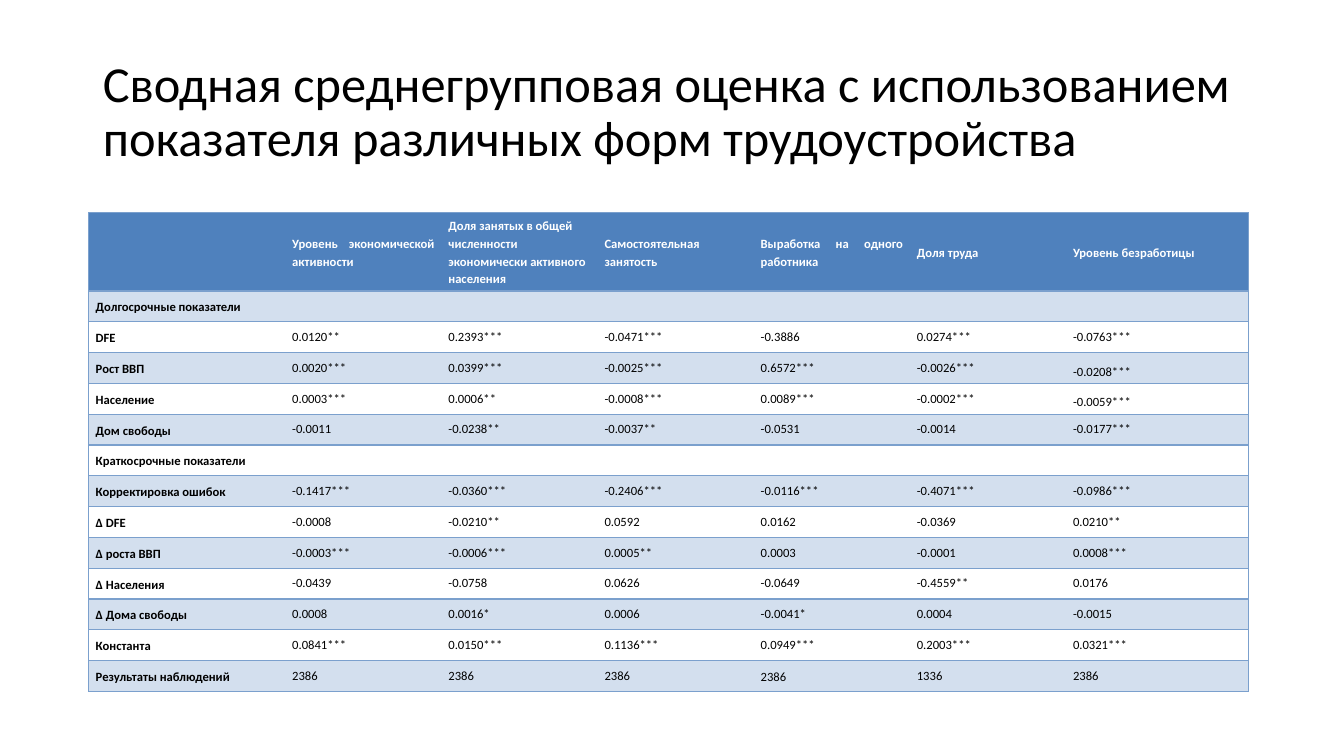
from dataclasses import dataclass

from lxml.etree import SubElement
from pptx import Presentation
from pptx.dml.color import RGBColor
from pptx.enum.text import MSO_ANCHOR, MSO_AUTO_SIZE, PP_ALIGN
from pptx.oxml.ns import qn
from pptx.util import Inches, Pt


@dataclass(frozen=True)
class Theme:
    """Colours, font and type sizes of the slide."""
    font: str = "Calibri"
    ink: str = "000000"
    light: str = "FFFFFF"
    head: str = "4F81BD"
    band: str = "D3DFEE"
    rule: str = "7BA0CD"
    title: int = 36
    body: int = 9


THEME = Theme()
WIDE, HIGH = Inches(13.33), Inches(7.5)
TITLE = "Сводная среднегрупповая оценка с использованием показателя различных форм трудоустройства"
HEADS = [
    "",
    "Уровень экономической активности",
    "Доля занятых в общей численности экономически активного населения",
    "Самостоятельная занятость",
    "Выработка на одного работника",
    "Доля труда",
    "Уровень безработицы",
]
BODY = [
    ["Долгосрочные показатели"] + [""] * 6,
    ["DFE", "0.0120**", "0.2393***", "-0.0471***", "-0.3886", "0.0274***", "-0.0763***"],
    ["Рост ВВП", "0.0020***", "0.0399***", "-0.0025***", "0.6572***", "-0.0026***", "-0.0208***"],
    ["Население", "0.0003***", "0.0006**", "-0.0008***", "0.0089***", "-0.0002***", "-0.0059***"],
    ["Дом свободы", "-0.0011", "-0.0238**", "-0.0037**", "-0.0531", "-0.0014", "-0.0177***"],
    ["Краткосрочные показатели"] + [""] * 6,
    ["Корректировка ошибок", "-0.1417***", "-0.0360***", "-0.2406***", "-0.0116***", "-0.4071***", "-0.0986***"],
    ["Δ DFE", "-0.0008", "-0.0210**", "0.0592", "0.0162", "-0.0369", "0.0210**"],
    ["Δ роста ВВП", "-0.0003***", "-0.0006***", "0.0005**", "0.0003", "-0.0001", "0.0008***"],
    ["Δ Населения", "-0.0439", "-0.0758", "0.0626", "-0.0649", "-0.4559**", "0.0176"],
    ["Δ Дома свободы", "0.0008", "0.0016*", "0.0006", "-0.0041*", "0.0004", "-0.0015"],
    ["Константа", "0.0841***", "0.0150***", "0.1136***", "0.0949***", "0.2003***", "0.0321***"],
    ["Результаты наблюдений", "2386", "2386", "2386", "2386", "1336", "2386"],
]
COLS = [1.95] + [1.55] * 5 + [1.81]
HEAD_PART = 0.16
LOW = {(3, 6), (4, 6)}
LOOSE = LOW | {(13, 4)}


def area(left, top, width, height):
    """Turn percentages of the slide into a box of lengths."""
    return (int(WIDE * left / 100), int(HIGH * top / 100),
            int(WIDE * width / 100), int(HIGH * height / 100))


def style(font, size, color, bold=False):
    """Format a font in the theme's typeface."""
    font.name, font.size, font.bold = THEME.font, Pt(size), bold
    font.color.rgb = RGBColor.from_string(color)


def add_title(slide, box):
    """Place and format the title in its box."""
    title = slide.shapes.title
    title.left, title.top, title.width, title.height = box
    frame = title.text_frame
    frame.text = TITLE
    frame.word_wrap = True
    frame.auto_size = MSO_AUTO_SIZE.NONE
    frame.vertical_anchor = MSO_ANCHOR.MIDDLE
    para = frame.paragraphs[0]
    para.alignment, para.line_spacing = PP_ALIGN.LEFT, 0.9
    style(para.runs[0].font, THEME.title, THEME.ink)


def edge(cell, sides):
    """Rule the given sides of a cell and clear the others."""
    props = cell._tc.get_or_add_tcPr()
    for side in "LRTB":
        line = SubElement(props, qn(f"a:ln{side}"), w=str(Pt(1)))
        if side in sides:
            fill = SubElement(line, qn("a:solidFill"))
            SubElement(fill, qn("a:srgbClr"), val=THEME.rule)
        else:
            SubElement(line, qn("a:noFill"))


def fill_cell(cell, text, row, col):
    """Write one cell with the look of its row and column."""
    cell.margin_left = cell.margin_right = Inches(0.07)
    cell.margin_top = cell.margin_bottom = Inches(0.04)
    cell.vertical_anchor = MSO_ANCHOR.BOTTOM if (row, col) in LOW else MSO_ANCHOR.MIDDLE
    edge(cell, "TB" + "L" * (col == 0) + "R" * (col == len(COLS) - 1))
    if row and row % 2 == 0:
        cell.fill.background()
    else:
        cell.fill.solid()
        cell.fill.fore_color.rgb = RGBColor.from_string(THEME.band if row else THEME.head)
    para = cell.text_frame.paragraphs[0]
    if not text:
        SubElement(para._p, qn("a:endParaRPr"), sz=str(THEME.body * 100))
        return
    para.text = text
    para.alignment = PP_ALIGN.LEFT if (row, col) == (0, 2) else PP_ALIGN.JUSTIFY
    label = row == 0 or col == 0
    para.line_spacing = 1.15 if label or (row, col) in LOOSE else 1.0
    style(para.runs[0].font, THEME.body, THEME.ink if row else THEME.light, label)


def add_grid(slide, box):
    """Build the table of estimates in its box."""
    data = [HEADS] + BODY
    width, height = box[2:]
    table = slide.shapes.add_table(len(data), len(COLS), *box).table
    for col, part in zip(table.columns, COLS):
        col.width = int(width * part / sum(COLS))
    for num, row in enumerate(table.rows):
        part = (1 - HEAD_PART) / len(BODY) if num else HEAD_PART
        row.height = int(height * part)
    for row, line in enumerate(data):
        for col, text in enumerate(line):
            fill_cell(table.cell(row, col), text, row, col)


def main():
    """Build the slide and save it."""
    deck = Presentation()
    deck.slide_width, deck.slide_height = WIDE, HIGH
    slide = deck.slides.add_slide(deck.slide_layouts[5])
    add_title(slide, area(6.9, 5.33, 86.25, 19.33))
    add_grid(slide, area(6.6, 28.13, 86.3, 63.07))
    deck.save("out.pptx")


if __name__ == "__main__":
    main()
